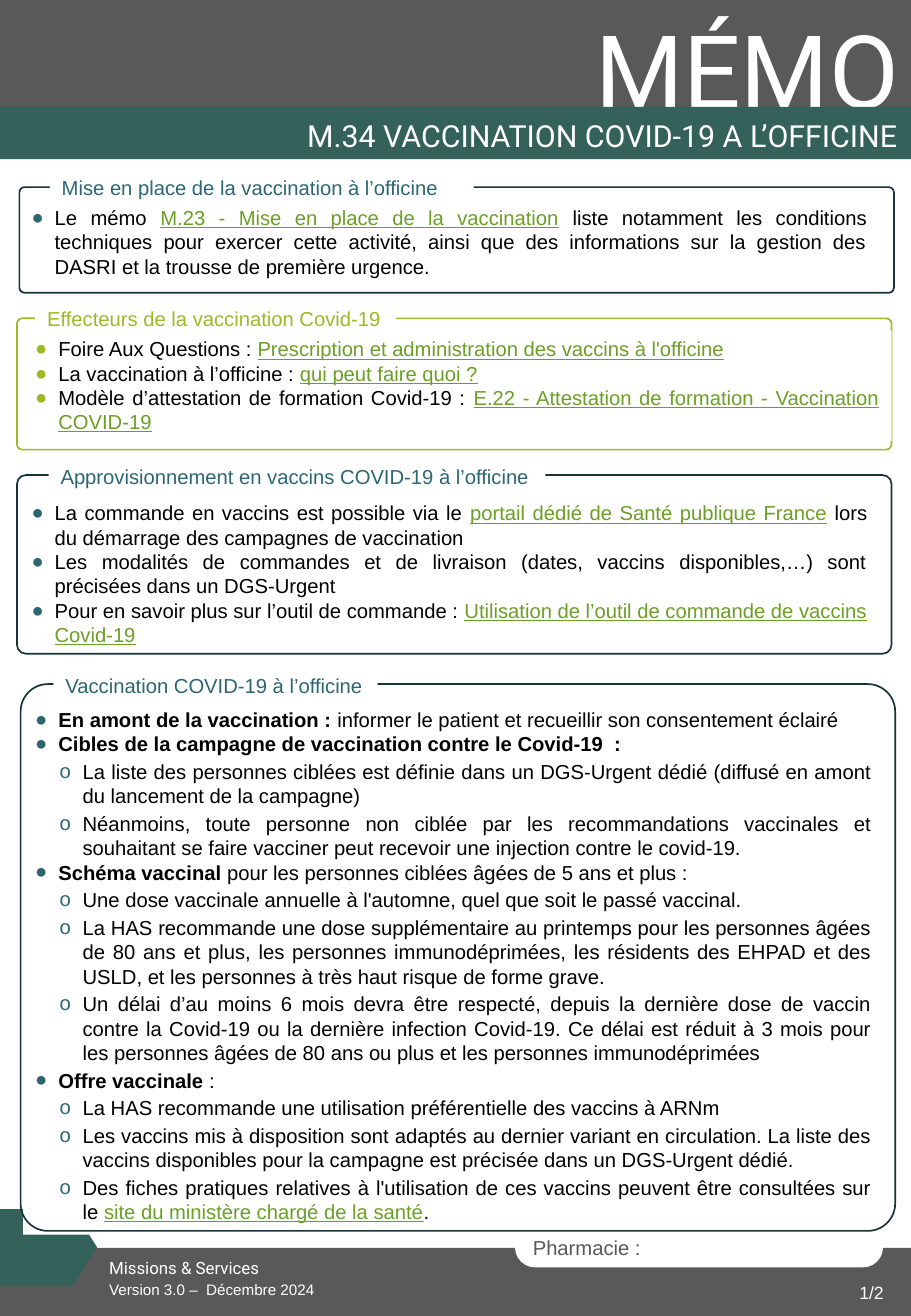
from dataclasses import dataclass
from typing import Any, NamedTuple, Optional

from lxml.etree import SubElement
from pptx import Presentation
from pptx.dml.color import RGBColor
from pptx.enum.shapes import MSO_SHAPE as Preset
from pptx.enum.text import MSO_ANCHOR as Anchor, MSO_AUTO_SIZE as AutoSize, PP_ALIGN as Align
from pptx.oxml.ns import qn
from pptx.util import Pt

PX = 9144


@dataclass(frozen=True)
class Theme:
    grey: str = "595959"
    green: str = "34615A"
    teal: str = "2C6672"
    lime: str = "9BBA28"
    border: str = "163339"
    link: str = "6B9F25"
    black: str = "000000"
    white: str = "FFFFFF"
    sans: str = "Arial"
    display: str = "Roboto"
    banner_size: float = 60
    title_size: float = 18
    text_size: float = 12
    page_size: float = 10.5
    service_size: float = 10
    version_size: float = 9


THEME = Theme()


class Box(NamedTuple):
    left: int
    top: int
    width: int
    height: int


class Run(NamedTuple):
    text: str
    bold: bool = False
    link: bool = False


class Item(NamedTuple):
    runs: list[Run]
    level: int = 0
    space_before: int = 0


class Panel(NamedTuple):
    preset: Preset
    box: Box
    colour: str
    adjustment: Optional[float] = None


class Label(NamedTuple):
    text: str
    box: Box
    size: float
    font: str = THEME.sans
    colour: str = THEME.white
    align: Align = Align.LEFT
    anchor: Anchor = Anchor.TOP
    line_spacing: float = 1.0


@dataclass(frozen=True)
class Section:
    caption: str
    caption_box: Box
    frame: Box
    body: Box
    items: list[Item]
    accent: str = THEME.teal
    border: str = THEME.border
    radius: float = 0.05
    body_in_front: bool = False
    body_filled: bool = True


def apply(target: Any, values: dict[str, Any]) -> None:
    for name, value in values.items():
        setattr(target, name, value)


def place(shape: Any, box: Box) -> None:
    apply(shape, {name: value * PX for name, value in box._asdict().items()})


def paint(shape: Any, colour: str) -> None:
    shape.fill.solid()
    shape.fill.fore_color.rgb = RGBColor.from_string(colour)


def style(font: Any, name: str, size: float, colour: str, **extra: Any) -> None:
    apply(font, {"name": name, "size": Pt(size), **extra})
    font.color.rgb = RGBColor.from_string(colour)


def add_panel(slide: Any, panel: Panel) -> Any:
    shape = slide.shapes.add_shape(panel.preset, *(value * PX for value in panel.box))
    shape.shadow.inherit = False
    paint(shape, panel.colour)
    shape.line.fill.background()
    if panel.adjustment is not None:
        shape.adjustments[0] = panel.adjustment
    return shape


def write_label(shape: Any, label: Label) -> None:
    frame = shape.text_frame
    apply(frame, {"word_wrap": True, "auto_size": AutoSize.NONE, "vertical_anchor": label.anchor})
    paragraph = frame.paragraphs[0]
    apply(paragraph, {"alignment": label.align, "line_spacing": label.line_spacing})
    run = paragraph.add_run()
    run.text = label.text
    style(run.font, label.font, label.size, label.colour)


def add_label(slide: Any, label: Label) -> None:
    write_label(slide.shapes.add_textbox(*(value * PX for value in label.box)), label)


def bring_to_front(shape: Any) -> None:
    shape.element.getparent().append(shape.element)


def set_bullet(paragraph: Any, level: int, colour: str) -> None:
    properties = paragraph._p.get_or_add_pPr()
    properties.set("marL", str((39 if level else 19) * PX))
    properties.set("indent", str(-19 * PX))
    SubElement(SubElement(properties, qn("a:buClr")), qn("a:srgbClr")).set("val", colour)
    SubElement(properties, qn("a:buFont")).set("typeface", THEME.sans)
    SubElement(properties, qn("a:buChar")).set("char", "o" if level else "●")


def write_list(body: Any, section: Section) -> None:
    bring_to_front(body)
    place(body, section.body)
    if section.body_filled:
        paint(body, THEME.white)
    frame = body.text_frame
    apply(frame, {"word_wrap": True, "auto_size": AutoSize.NONE, "vertical_anchor": Anchor.TOP})
    for index, item in enumerate(section.items):
        paragraph = frame.add_paragraph() if index else frame.paragraphs[0]
        set_bullet(paragraph, item.level, section.accent)
        apply(paragraph, {"level": item.level, "alignment": Align.JUSTIFY,
                          "space_before": Pt(item.space_before)})
        for part in item.runs:
            run = paragraph.add_run()
            run.text = part.text
            style(run.font, THEME.sans, THEME.text_size, THEME.link if part.link else THEME.black,
                  bold=part.bold, underline=part.link)


def add_frame(slide: Any, section: Section) -> None:
    frame = add_panel(slide, Panel(Preset.ROUNDED_RECTANGLE, section.frame, THEME.white, section.radius))
    frame.fill.background()
    frame.line.color.rgb = RGBColor.from_string(section.border)
    frame.line.width = Pt(1)
    caption = add_panel(slide, Panel(Preset.RECTANGLE, section.caption_box, THEME.white))
    write_label(caption, Label(section.caption, section.caption_box, THEME.text_size, colour=section.accent))


def add_section(slide: Any, body: Any, section: Section) -> None:
    if section.body_in_front:
        add_frame(slide, section)
        write_list(body, section)
    else:
        write_list(body, section)
        add_frame(slide, section)


def sub(text: str, *more: Run) -> Item:
    return Item([Run(text), *more], 1, 2)


def link(text: str) -> Run:
    return Run(text, link=True)


SECTIONS = [
    Section("Mise en place de la vaccination à l’officine", Box(41, 139, 349, 30),
            Box(16, 154, 720, 87), Box(16, 164, 708, 71), [
        Item([Run("Le mémo "), link("M.23 - Mise en place de la vaccination"), Run(" liste notamment les conditions techniques pour exercer cette activité, ainsi que des informations sur la gestion des DASRI et la trousse de première urgence.")]),
    ]),
    Section("Effecteurs de la vaccination Covid-19", Box(29, 247, 297, 30),
            Box(14, 262, 720, 108), Box(19, 272, 715, 91), [
        Item([Run("Foire Aux Questions : "), link("Prescription et administration des vaccins à l'officine")]),
        Item([Run("La vaccination à l’officine : "), link("qui peut faire quoi ?")]),
        Item([Run("Modèle d’attestation de formation Covid-19 : "), link("E.22 - Attestation de formation - Vaccination COVID-19")]),
    ], accent=THEME.lime, border=THEME.lime, radius=0.04, body_in_front=True),
    Section("Approvisionnement en vaccins COVID-19 à l’officine", Box(40, 377, 409, 30),
            Box(14, 391, 720, 147), Box(16, 407, 708, 131), [
        Item([Run("La commande en vaccins est possible via le "), link("portail dédié de Santé publique France"), Run(" lors du démarrage des campagnes de vaccination")]),
        Item([Run("Les modalités de commandes et de livraison (dates, vaccins disponibles,…) sont précisées dans un DGS-Urgent")]),
        Item([Run("Pour en savoir plus sur l’outil de commande : "), link("Utilisation de l’outil de commande de vaccins Covid-19")]),
    ], body_in_front=True, body_filled=False),
    Section("Vaccination COVID-19 à l’officine", Box(44, 549, 267, 30),
            Box(17, 563, 720, 450), Box(19, 577, 709, 439), [
        Item([Run("En amont de la vaccination : ", True), Run("informer le patient et recueillir son consentement éclairé")]),
        Item([Run("Cibles de la campagne de vaccination contre le Covid-19  :", True)]),
        sub("La liste des personnes ciblées est définie dans un DGS-Urgent dédié (diffusé en amont du lancement de la campagne)"),
        sub("Néanmoins, toute personne non ciblée par les recommandations vaccinales et souhaitant se faire vacciner peut recevoir une injection contre le covid-19."),
        Item([Run("Schéma vaccinal ", True), Run("pour les personnes ciblées âgées de 5 ans et plus : ")]),
        sub("Une dose vaccinale annuelle à l'automne, quel que soit le passé vaccinal."),
        sub("La HAS recommande une dose supplémentaire au printemps pour les personnes âgées de 80 ans et plus, les personnes immunodéprimées, les résidents des EHPAD et des USLD, et les personnes à très haut risque de forme grave."),
        sub("Un délai d’au moins 6 mois devra être respecté, depuis la dernière dose de vaccin contre la Covid-19 ou la dernière infection Covid-19. Ce délai est réduit à 3 mois pour les personnes âgées de 80 ans ou plus et les personnes immunodéprimées"),
        Item([Run("Offre vaccinale", True), Run(" :")], space_before=2),
        sub("La HAS recommande une utilisation préférentielle des vaccins à ARNm"),
        sub("Les vaccins mis à disposition sont adaptés au dernier variant en circulation. La liste des vaccins disponibles pour la campagne est précisée dans un DGS-Urgent dédié."),
        sub("Des fiches pratiques relatives à l'utilisation de ces vaccins peuvent être consultées sur le ", link("site du ministère chargé de la santé"), Run(".")),
    ]),
]


def main() -> None:
    presentation = Presentation()
    apply(presentation, {"slide_width": 750 * PX, "slide_height": 1083 * PX})
    slide = presentation.slides.add_slide(presentation.slide_layouts[4])
    title, *bodies = slide.placeholders

    add_panel(slide, Panel(Preset.RECTANGLE, Box(0, 0, 750, 88), THEME.grey))
    add_label(slide, Label("MÉMO", Box(463, 1, 287, 111), THEME.banner_size, THEME.display, align=Align.RIGHT))
    add_panel(slide, Panel(Preset.RECTANGLE, Box(0, 88, 750, 43), THEME.green))
    add_panel(slide, Panel(Preset.RECTANGLE, Box(0, 1027, 750, 56), THEME.grey))
    pharmacy_box = Box(424, 1010, 303, 33)
    pharmacy = add_panel(slide, Panel(Preset.ROUNDED_RECTANGLE, pharmacy_box, THEME.white, 0.5))
    write_label(pharmacy, Label("Pharmacie :", pharmacy_box, THEME.text_size, colour=THEME.grey, anchor=Anchor.MIDDLE))
    add_panel(slide, Panel(Preset.PENTAGON, Box(0, 995, 80, 63), THEME.green, 0.32))
    add_label(slide, Label("Missions & Services", Box(80, 1030, 192, 27), THEME.service_size, THEME.display))
    add_label(slide, Label("Version 3.0 –  Décembre 2024", Box(80, 1049, 588, 25), THEME.version_size))

    heading = Label("M.34 VACCINATION COVID-19 A L’OFFICINE", Box(23, 95, 726, 37), THEME.title_size,
                    THEME.display, align=Align.RIGHT, anchor=Anchor.MIDDLE, line_spacing=0.9)
    bring_to_front(title)
    place(title, heading.box)
    write_label(title, heading)

    for body, section in zip(bodies, SECTIONS):
        add_section(slide, body, section)
    add_label(slide, Label("1/2", Box(687, 1047, 61, 34), THEME.page_size, align=Align.CENTER, anchor=Anchor.MIDDLE))
    presentation.save("out.pptx")


if __name__ == "__main__":
    main()
